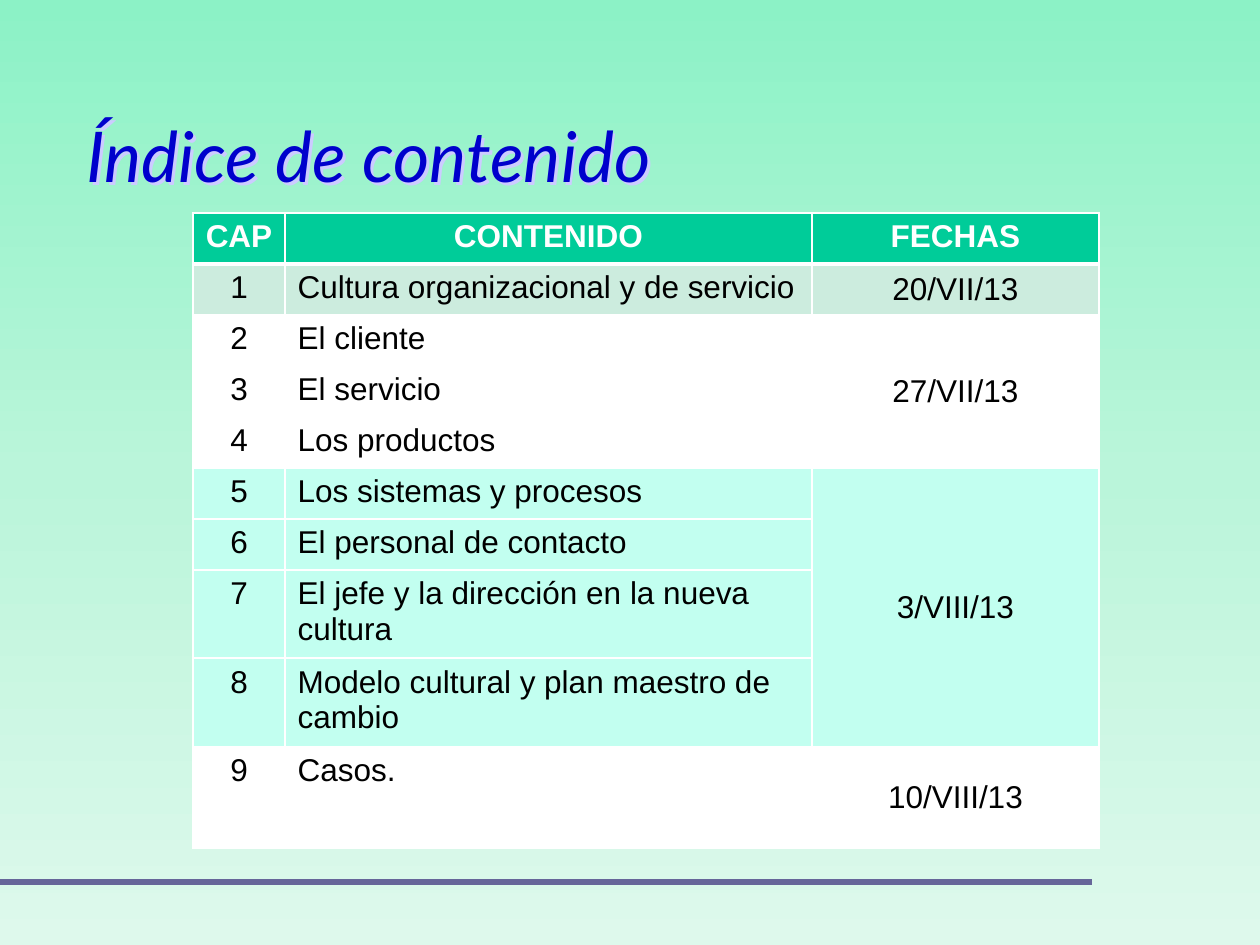
from copy import deepcopy
from dataclasses import dataclass

from lxml.etree import SubElement
from pptx import Presentation
from pptx.dml.color import RGBColor
from pptx.enum.shapes import MSO_CONNECTOR
from pptx.enum.text import MSO_ANCHOR, PP_ALIGN
from pptx.oxml.ns import qn
from pptx.util import Emu, Pt

PX_PER_INCH = 126


def px(n: int) -> Emu:
    return Emu(round(n * 914400 / PX_PER_INCH))


@dataclass(frozen=True)
class Theme:
    gradient: tuple = ((0, "8CF2C6"), (0.5, "BAF5DA"), (1, "DEF9EC"))
    title: str = "0000CC"
    title_shadow: str = "CCCCFF"
    rule: str = "666699"
    header: str = "00CC99"
    gray_green: str = "CCECDE"
    white: str = "FFFFFF"
    aqua: str = "C2FFF0"
    text: str = "000000"
    title_font: str = "Lato"
    body_font: str = "Arial"
    title_pt: int = 40
    body_pt: int = 18
    rule_pt: int = 3
    border_pt: int = 1
    header_border_pt: int = 3


@dataclass(frozen=True)
class Session:
    """Chapters that share one date and one fill."""
    date: str
    fill: str
    chapters: tuple
    blank_rows: int = 0


THEME = Theme()
HEADINGS = ("CAP", "CONTENIDO", "FECHAS")
COLUMNS = (92, 527, 287)
ROW, TALL_ROW = 51, 88
TALL_CHAPTERS = (7, 8)
SESSIONS = (
    Session("20/VII/13", THEME.gray_green, ("Cultura organizacional y de servicio",)),
    Session("27/VII/13", THEME.white, ("El cliente", "El servicio", "Los productos")),
    Session("3/VIII/13", THEME.aqua, (
        "Los sistemas y procesos",
        "El personal de contacto",
        "El jefe y la dirección en la nueva cultura",
        "Modelo cultural y plan maestro de cambio",
    )),
    Session("10/VIII/13", THEME.white, ("Casos.",), blank_rows=1),
)


def rgb(color: str) -> RGBColor:
    return RGBColor.from_string(color)


def draw_background(s) -> None:
    fill = s.background.fill
    fill.gradient()
    fill.gradient_angle = 270
    stops = s._element.find(".//" + qn("a:gsLst"))
    stops.insert(1, deepcopy(stops[0]))
    for stop, (position, color) in zip(fill.gradient_stops, THEME.gradient):
        stop.position = position
        stop.color.rgb = rgb(color)


def draw_rule(s) -> None:
    line = s.shapes.add_connector(MSO_CONNECTOR.STRAIGHT, 0, px(882), px(1092), px(882))
    line.line.color.rgb = rgb(THEME.rule)
    line.line.width = Pt(THEME.rule_pt)
    SubElement(line._element.spPr, qn("a:effectLst"))


def draw_title(s, text: str) -> None:
    sp = s.shapes.add_textbox(px(74), px(106), px(1072), px(97))
    tf = sp.text_frame
    tf.word_wrap = True
    p = tf.paragraphs[0]
    p.text = text
    p.font.name, p.font.size = THEME.title_font, Pt(THEME.title_pt)
    p.font.italic = True
    p.font.color.rgb = rgb(THEME.title)
    # Soft offset shadow behind the letters
    effects = SubElement(sp._element.spPr, qn("a:effectLst"))
    shadow = SubElement(effects, qn("a:outerShdw"), dist=str(px(4)), dir="2700000")
    SubElement(shadow, qn("a:srgbClr"), val=THEME.title_shadow)


def style_cell(cell, fill: str, top_pt: int, bottom_pt: int) -> None:
    tc_pr = cell._tc.get_or_add_tcPr()
    sides = {"L": THEME.border_pt, "R": THEME.border_pt, "T": top_pt, "B": bottom_pt}
    for side, width in sides.items():
        ln = SubElement(tc_pr, qn(f"a:ln{side}"), w=str(Pt(width)))
        solid = SubElement(ln, qn("a:solidFill"))
        SubElement(solid, qn("a:srgbClr"), val=THEME.white)
    cell.fill.solid()
    cell.fill.fore_color.rgb = rgb(fill)


def write_cell(cell, text: str, color: str = THEME.text, bold: bool = False,
               align: PP_ALIGN = PP_ALIGN.CENTER) -> None:
    p = cell.text_frame.paragraphs[0]
    p.text = text
    p.alignment = align
    p.font.name, p.font.size = THEME.body_font, Pt(THEME.body_pt)
    p.font.bold = bold
    p.font.color.rgb = rgb(color)


def draw_table(s) -> None:
    fills = [THEME.header]
    for session in SESSIONS:
        fills += [session.fill] * (len(session.chapters) + session.blank_rows)
    heights = [TALL_ROW if i in TALL_CHAPTERS else ROW for i in range(len(fills))]
    table = s.shapes.add_table(len(fills), len(COLUMNS), px(193), px(213),
                               px(sum(COLUMNS)), px(sum(heights))).table
    for column, width in zip(table.columns, COLUMNS):
        column.width = px(width)

    # Fills and borders
    for i, (row, height, fill) in enumerate(zip(table.rows, heights, fills)):
        row.height = px(height)
        top = THEME.header_border_pt if i == 1 else THEME.border_pt
        bottom = THEME.header_border_pt if i == 0 else THEME.border_pt
        for cell in row.cells:
            style_cell(cell, fill, top, bottom)

    # Header
    for j, heading in enumerate(HEADINGS):
        write_cell(table.cell(0, j), heading, THEME.white, bold=True)

    # Chapters, with one date cell for each session
    first = 1
    for session in SESSIONS:
        for i, chapter in enumerate(session.chapters, first):
            write_cell(table.cell(i, 0), str(i))
            write_cell(table.cell(i, 1), chapter, align=PP_ALIGN.LEFT)
        last = first + len(session.chapters) + session.blank_rows - 1
        date = table.cell(first, 2)
        if last > first:
            date.merge(table.cell(last, 2))
        write_cell(date, session.date)
        date.vertical_anchor = MSO_ANCHOR.MIDDLE
        first = last + 1


def main() -> None:
    prs = Presentation()
    prs.slide_width, prs.slide_height = px(1260), px(945)
    s = prs.slides.add_slide(prs.slide_layouts[6])
    draw_background(s)
    draw_rule(s)
    draw_title(s, "Índice de contenido")
    draw_table(s)
    prs.save("out.pptx")


if __name__ == "__main__":
    main()
